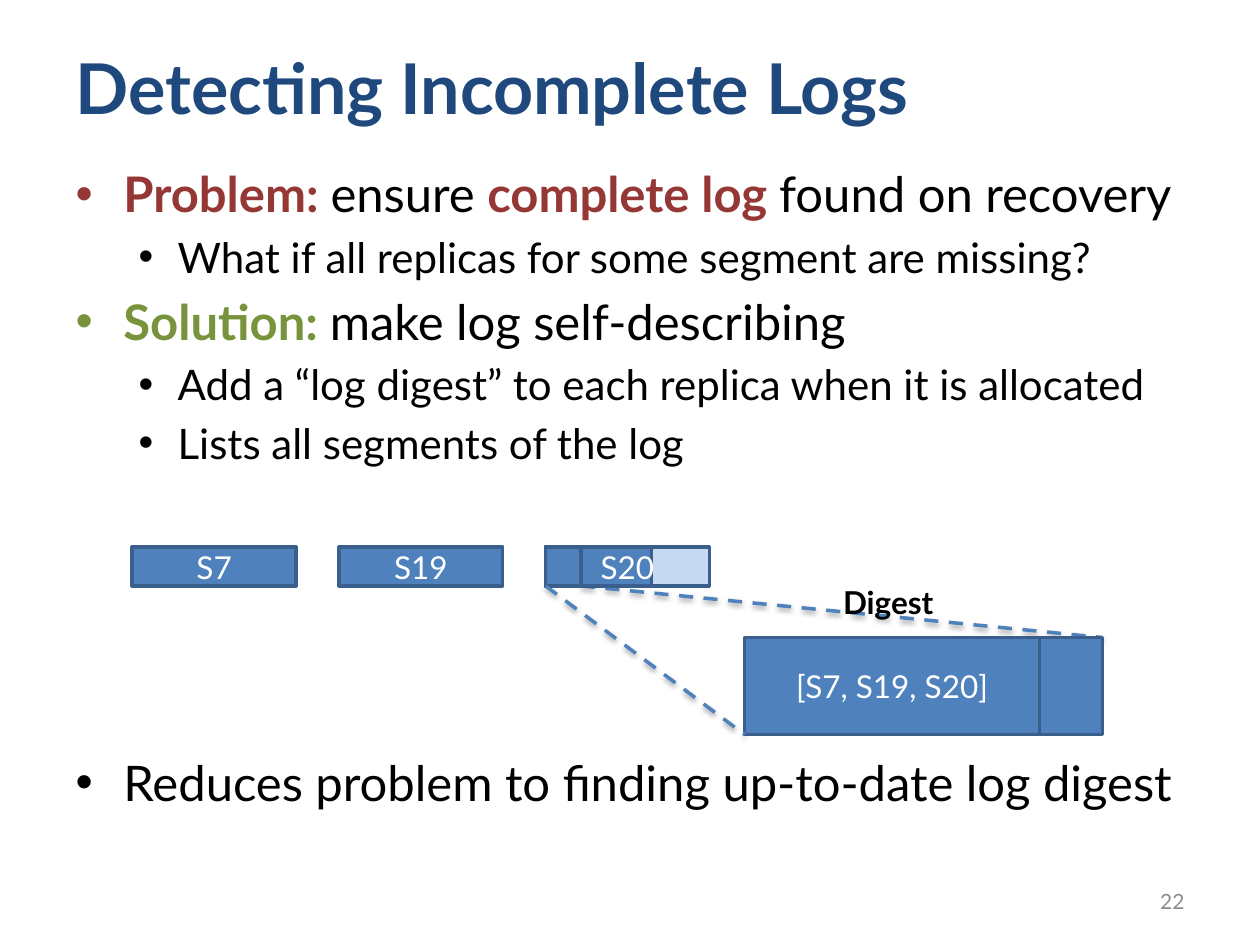
import dataclasses

import lxml.etree
import pptx
import pptx.dml.color
import pptx.enum.dml
import pptx.enum.shapes
import pptx.enum.text
import pptx.oxml
import pptx.oxml.ns
import pptx.util

ALIGN = pptx.enum.text.PP_ALIGN
ANCHOR = pptx.enum.text.MSO_ANCHOR
COLUMNS, ROWS = 100, 75


@dataclasses.dataclass(frozen=True)
class Theme:
    font: str = "Lato"
    title: str = "1F497D"
    problem: str = "953734"
    solution: str = "77933C"
    text: str = "000000"
    inverse: str = "FFFFFF"
    muted: str = "8C8C8C"
    segment: str = "4F81BD"
    free: str = "C6D9F1"
    outline: str = "3A5F8C"
    title_size: int = 40
    body_sizes: tuple = (28, 24)
    label_size: int = 18
    number_size: int = 12
    line_width: int = 2
    hanging: tuple = ((0.38, 0.38), (0.81, 0.31))  # margin and hang per level


class SlideBuilder:
    def __init__(self, deck, theme):
        self.theme = theme
        self.slide = deck.slides.add_slide(deck.slide_layouts[1])
        self.column = deck.slide_width / COLUMNS
        self.row = deck.slide_height / ROWS

    def place(self, left, top, width, height):
        return (round(left * self.column), round(top * self.row),
                round(width * self.column), round(height * self.row))

    def move(self, shape, box):
        shape.left, shape.top, shape.width, shape.height = self.place(*box)

    def run(self, paragraph, words, size, color, bold=False):
        run = paragraph.add_run()
        run.text = words
        run.font.name = self.theme.font
        run.font.size = pptx.util.Pt(size)
        run.font.bold = bold
        run.font.color.rgb = pptx.dml.color.RGBColor.from_string(color)

    def title(self, words, box):
        heading = self.slide.shapes.title
        self.move(heading, box)
        heading.text_frame.auto_size = pptx.enum.text.MSO_AUTO_SIZE.NONE
        heading.text_frame.vertical_anchor = ANCHOR.MIDDLE
        paragraph = heading.text_frame.paragraphs[0]
        paragraph.alignment = ALIGN.LEFT
        self.run(paragraph, words, self.theme.title_size, self.theme.title, True)

    def bullets(self, items, box):
        """Each item is a level, extra space before in points, and its runs."""
        body = self.slide.placeholders[1]
        self.move(body, box)
        frame = body.text_frame
        frame.auto_size = pptx.enum.text.MSO_AUTO_SIZE.NONE
        for index, (level, gap, runs) in enumerate(items):
            paragraph = frame.add_paragraph() if index else frame.paragraphs[0]
            size = self.theme.body_sizes[level]
            paragraph.level = level
            paragraph.space_before = pptx.util.Pt(0.2 * size + gap)
            margin, hang = self.theme.hanging[level]
            properties = paragraph._p.get_or_add_pPr()
            properties.set("marL", str(pptx.util.Inches(margin)))
            properties.set("indent", str(-pptx.util.Inches(hang)))
            for tag, name, value in (("a:buFont", "typeface", "Arial"),
                                     ("a:buChar", "char", "•")):
                mark = lxml.etree.SubElement(properties, pptx.oxml.ns.qn(tag))
                mark.set(name, value)
            for words, color, bold in runs:
                self.run(paragraph, words, size, color, bold)

    def label(self, words, box, size, color, align, anchor, bold=False):
        frame = self.slide.shapes.add_textbox(*self.place(*box)).text_frame
        frame.word_wrap = True
        frame.vertical_anchor = anchor
        frame.paragraphs[0].alignment = align
        self.run(frame.paragraphs[0], words, size, color, bold)

    def block(self, box, fill=None, words=None):
        block = self.slide.shapes.add_shape(
            pptx.enum.shapes.MSO_SHAPE.RECTANGLE, *self.place(*box))
        block.shadow.inherit = False
        if fill:
            block.fill.solid()
            block.fill.fore_color.rgb = pptx.dml.color.RGBColor.from_string(fill)
        else:
            block.fill.background()
        self.stroke(block.line, self.theme.outline)
        if words:
            block.text_frame.vertical_anchor = ANCHOR.MIDDLE
            paragraph = block.text_frame.paragraphs[0]
            paragraph.alignment = ALIGN.CENTER
            self.run(paragraph, words, self.theme.label_size, self.theme.inverse)

    def stroke(self, line, color):
        line.color.rgb = pptx.dml.color.RGBColor.from_string(color)
        line.width = pptx.util.Pt(self.theme.line_width)

    def zoom_line(self, start, end):
        guide = self.slide.shapes.add_connector(
            pptx.enum.shapes.MSO_CONNECTOR.STRAIGHT, *self.place(*start, *end))
        self.stroke(guide.line, self.theme.segment)
        guide.line.dash_style = pptx.enum.dml.MSO_LINE.DASH
        guide._element.spPr.append(pptx.oxml.parse_xml(
            f'<a:effectLst {pptx.oxml.ns.nsdecls("a")}>'
            f'<a:outerShdw blurRad="{pptx.util.Pt(3.1)}" dist="{pptx.util.Pt(1.6)}"'
            ' dir="5400000" rotWithShape="0"><a:srgbClr val="000000">'
            '<a:alpha val="38000"/></a:srgbClr></a:outerShdw></a:effectLst>'))


def main():
    deck = pptx.Presentation()
    deck.slide_width = pptx.util.Inches(10)
    deck.slide_height = pptx.util.Inches(7.5)
    theme = Theme()
    page = SlideBuilder(deck, theme)

    # Title and argument; the last point sits below the diagram
    page.title("Detecting Incomplete Logs", (5, 3, 90, 7.8))
    plain = (theme.text, False)
    problem, solution = (theme.problem, True), (theme.solution, True)
    page.bullets([
        (0, 0, [("Problem: ", *problem), ("ensure ", *plain),
                ("complete log ", *problem), ("found on recovery", *plain)]),
        (1, 0, [("What if all replicas for some segment are missing?", *plain)]),
        (0, 0, [("Solution: ", *solution), ("make log self-describing", *plain)]),
        (1, 0, [("Add a “log digest” to each replica when it is allocated",
                 *plain)]),
        (1, 0, [("Lists all segments of the log", *plain)]),
        (0, 157, [("Reduces problem to finding up-to-date log digest", *plain)]),
    ], (5, 12.5, 90, 54.5))
    page.label("22", (71.7, 69.5, 23.3, 4), theme.number_size, theme.muted,
               ALIGN.RIGHT, ANCHOR.MIDDLE)

    # Geometry of the log and of the enlarged digest
    first, pitch, top, width, height = 10.5, 16.4, 43.4, 13, 3.1
    head = first + 2 * pitch
    bottom = top + height
    header_width, used_width = 2.8, 8.4
    digest_left, digest_top, digest_height = 59.1, 50.6, 7.7
    digest_width, list_width = 28.4, 23.4

    # Enlarged header, behind its list of segments
    page.zoom_line((head + header_width, bottom),
                   (digest_left + digest_width, digest_top))
    page.block((digest_left, digest_top, digest_width, digest_height),
               theme.segment)

    # Full segments
    for index, name in enumerate(("S7", "S19")):
        page.block((first + index * pitch, top, width, height),
                   theme.segment, name)

    # Head segment: free space, used part, name, header
    for part_width, fill, name in ((width, theme.free, None),
                                   (used_width, theme.segment, None),
                                   (width, None, "S20"),
                                   (header_width, None, None)):
        page.block((head, top, part_width, height), fill, name)

    # Digest contents
    page.block((digest_left, digest_top, list_width, digest_height),
               theme.segment, "[S7, S19, S20]")
    page.zoom_line((head, bottom), (digest_left, digest_top + digest_height))
    page.label("Digest", (64.2, 45.8, 12.6, 4), theme.label_size, theme.text,
               ALIGN.CENTER, ANCHOR.TOP, True)

    deck.save("out.pptx")


if __name__ == "__main__":
    main()
